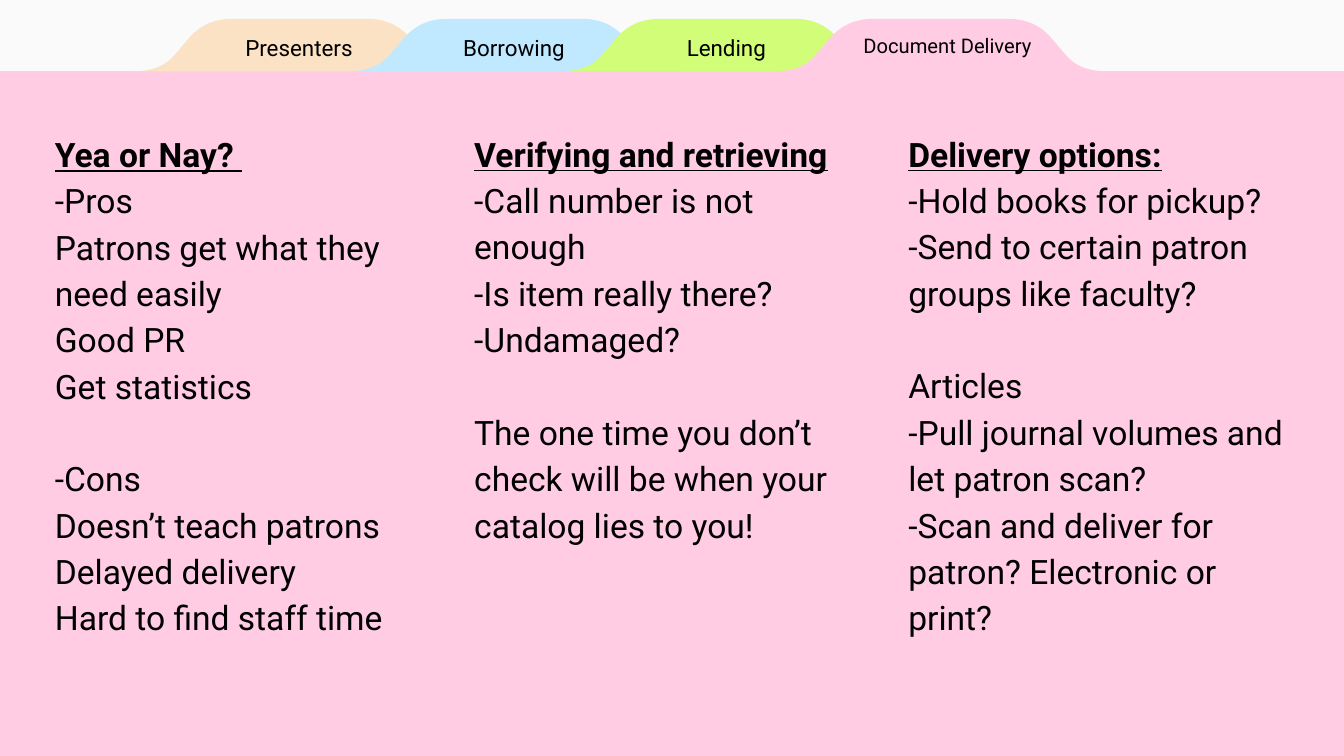
import pptx
import pptx.util
import pptx.dml.color
import pptx.enum.shapes
import pptx.enum.text

Inches = pptx.util.Inches
Pt = pptx.util.Pt
PP = pptx.enum.text.PP_ALIGN
ANCHOR = pptx.enum.text.MSO_ANCHOR

COLORS = {"page": "FAFAFA", "text": "000000", "peach": "FBE2C4",
          "blue": "C0E9FF", "lime": "D2FD78", "pink": "FFCCE4"}
# Each tab: left edge, colour, label (the title labels the last one)
TABS = [(1, "peach", "Presenters"), (2.6, "blue", "Borrowing"),
        (4.18, "lime", "Lending"), (5.77, "pink", None)]
TOP, TALL, WIDE = 0.14, 0.39, 2.46

# Each column: left edge, height, heading, groups of lines split by a gap
COLUMNS = [
    (0.31, 4.65, "Yea or Nay? ", [
        ["-Pros", "Patrons get what they need easily", "Good PR",
         "Get statistics"],
        ["-Cons", "Doesn’t teach patrons Delayed delivery",
         "Hard to find staff time"]]),
    (3.43, 4.56, "Verifying and retrieving", [
        ["-Call number is not enough",
         "-Is item really there? -Undamaged?"],
        ["The one time you don’t check will be when your catalog lies to you!"]]),
    (6.66, 4.56, "Delivery options:", [
        ["-Hold books for pickup?",
         "-Send to certain patron groups like faculty?"],
        ["Articles", "-Pull journal volumes and let patron scan?",
         "-Scan and deliver for patron? Electronic or print?"]]),
]
LABEL = {"margin_left": Inches(0.1), "margin_right": Inches(0.1),
         "margin_top": 0, "margin_bottom": 0,
         "vertical_anchor": ANCHOR.MIDDLE}
BODY = {"margin_left": Inches(0.1), "margin_right": Inches(0.1),
        "margin_top": Inches(0.08), "margin_bottom": Inches(0.12),
        "vertical_anchor": ANCHOR.TOP}


def apply(item, values):
    for name, value in values.items():
        setattr(item, name, value)


def color(name):
    return pptx.dml.color.RGBColor.from_string(COLORS[name])


def paint(shape, name):
    shape.shadow.inherit = False
    shape.fill.solid()
    shape.fill.fore_color.rgb = color(name)
    shape.line.fill.background()


def frame(shape, values):
    text = shape.text_frame
    apply(text, {"word_wrap": True,
                 "auto_size": pptx.enum.text.MSO_AUTO_SIZE.NONE, **values})
    return text


def write(para, words, size, **values):
    run = para.add_run()
    run.text = words
    apply(run.font, {"name": "Roboto", "size": Pt(size), **values})
    run.font.color.rgb = color("text")


def curve(start, bend, end, count=12):
    """Points along a quadratic curve."""
    for i in range(count + 1):
        t = i / count
        yield tuple((1 - t) ** 2 * a + 2 * t * (1 - t) * b + t * t * c
                    for a, b, c in zip(start, bend, end))


def add_tab(slide, left, name):
    # The right side mirrors the left one
    side = [*curve((0, TALL), (0.19, TALL), (0.29, 0.28)),
            *curve((0.41, 0.14), (0.53, 0), (0.73, 0))]
    edge = side + [(WIDE - x, y) for x, y in reversed(side)]
    points = [(Inches(left + x), Inches(TOP + y)) for x, y in edge]
    pen = slide.shapes.build_freeform(*points[0], scale=1.0)
    pen.add_line_segments(points[1:], close=True)
    paint(pen.convert_to_shape(), name)


def add_label(slide, left, words):
    box = slide.shapes.add_textbox(Inches(left), Inches(TOP),
                                   Inches(1.57), Inches(TALL))
    para = frame(box, LABEL).paragraphs[0]
    apply(para, {"alignment": PP.CENTER, "line_spacing": 1.15})
    write(para, words, 12)


def set_title(slide, words):
    title = slide.shapes.title
    apply(title, {"left": Inches(6.26), "top": Inches(TOP),
                  "width": Inches(1.58), "height": Inches(TALL)})
    para = frame(title, LABEL).paragraphs[0]
    para.alignment = PP.CENTER
    write(para, words, 10.8)
    # Bring the title in front of its tab
    title.element.getparent().append(title.element)


def add_column(slide, left, tall, head, groups):
    box = slide.shapes.add_textbox(Inches(left), Inches(0.87),
                                   Inches(3.12), Inches(tall))
    text = frame(box, BODY)
    para = text.paragraphs[0]
    para.line_spacing = 1.15
    write(para, head, 18, bold=True, underline=True)
    for g, lines in enumerate(groups):
        for i, words in enumerate(lines):
            para = text.add_paragraph()
            para.line_spacing = 1.15
            if g and not i:
                para.space_before = Pt(24.8)
            write(para, words, 18)


def main():
    deck = pptx.Presentation()
    # Widescreen, 16 to 9
    wide = Inches(10)
    tall = wide * 9 // 16
    apply(deck, {"slide_width": wide, "slide_height": tall})
    slide = deck.slides.add_slide(deck.slide_layouts[5])

    # Page and folder
    slide.background.fill.solid()
    slide.background.fill.fore_color.rgb = color("page")
    top = Inches(TOP + TALL)
    sheet = slide.shapes.add_shape(
        pptx.enum.shapes.MSO_SHAPE.ROUNDED_RECTANGLE,
        0, top, wide, tall - top)
    sheet.adjustments[0] = 0
    paint(sheet, "pink")

    # Tabs, then their labels on top
    for left, name, _ in TABS:
        add_tab(slide, left, name)
    for left, _, words in TABS:
        if words:
            add_label(slide, left + 0.44, words)
    set_title(slide, "Document Delivery")

    # Text columns
    for column in COLUMNS:
        add_column(slide, *column)
    deck.save("out.pptx")


if __name__ == "__main__":
    main()
